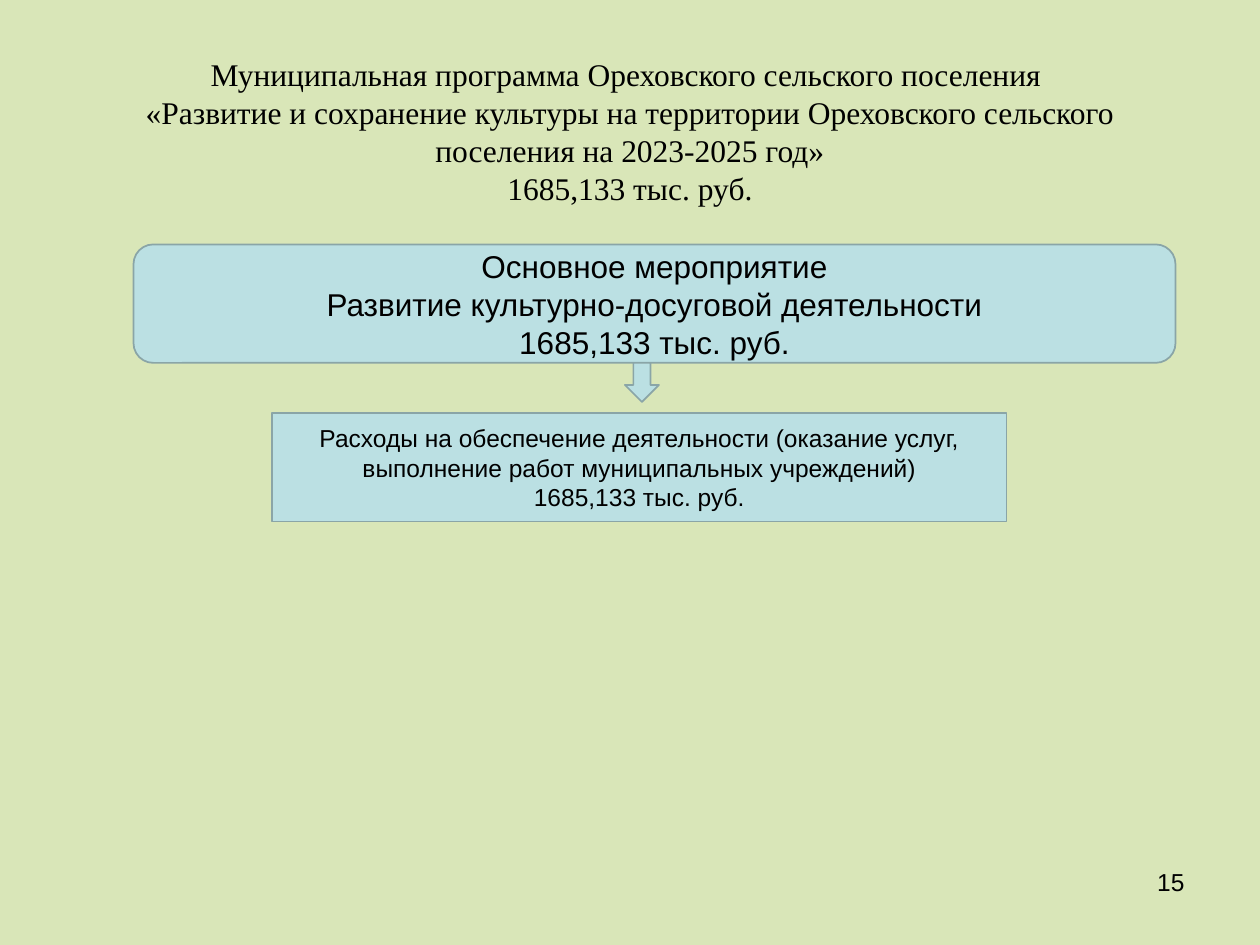
import pptx
import pptx.dml.color
import pptx.enum.shapes
import pptx.enum.text
import pptx.util
from dataclasses import dataclass

Inches = pptx.util.Inches
Shape = pptx.enum.shapes.MSO_SHAPE
Align = pptx.enum.text.PP_ALIGN
Anchor = pptx.enum.text.MSO_ANCHOR
rgb = pptx.dml.color.RGBColor.from_string


@dataclass(frozen=True)
class Theme:
    background: str = "D9E6B8"
    fill: str = "BBE0E3"
    outline: str = "8AA5A7"
    text: str = "000000"
    title_font: str = "Times New Roman"
    body_font: str = "Arial"
    large: int = 18
    small: int = 14


theme = Theme()


def write(frame, paragraphs, size, font, align=Align.CENTER, anchor=Anchor.MIDDLE):
    """Fill a text frame; each paragraph is a list of lines joined by line breaks."""
    frame.word_wrap = True
    frame.auto_size = pptx.enum.text.MSO_AUTO_SIZE.NONE
    frame.vertical_anchor = anchor
    for index, lines in enumerate(paragraphs):
        paragraph = frame.add_paragraph() if index else frame.paragraphs[0]
        paragraph.alignment = align
        for number, line in enumerate(lines):
            if number:
                paragraph.add_line_break()
            run = paragraph.add_run()
            run.text = line
            run.font.size = pptx.util.Pt(size)
            run.font.name = font
            run.font.color.rgb = rgb(theme.text)


def add_block(slide, kind, left, top, width, height):
    block = slide.shapes.add_shape(
        kind, Inches(left), Inches(top), Inches(width), Inches(height))
    block.shadow.inherit = False
    block.fill.solid()
    block.fill.fore_color.rgb = rgb(theme.fill)
    block.line.color.rgb = rgb(theme.outline)
    block.line.width = pptx.util.Pt(1)
    return block


deck = pptx.Presentation()
deck.slide_width, deck.slide_height = Inches(10), Inches(7.5)
slide = deck.slides.add_slide(deck.slide_layouts[5])
slide.background.fill.solid()
slide.background.fill.fore_color.rgb = rgb(theme.background)

amount = "1685,133 тыс. руб."

program = slide.shapes.title
program.left, program.top = Inches(0.5), Inches(0.3)
program.width, program.height = Inches(9), Inches(1.48)
write(program.text_frame, [[
    "Муниципальная программа Ореховского сельского поселения ",
    "«Развитие и сохранение культуры на территории Ореховского сельского "
    "поселения на 2023-2025 год»",
    amount,
]], theme.large, theme.title_font)

page_number = slide.shapes.add_textbox(
    Inches(7.17), Inches(6.83), Inches(2.33), Inches(0.52))
write(page_number.text_frame, [["15"]], theme.small, theme.body_font,
      Align.RIGHT, Anchor.TOP)

activity = add_block(slide, Shape.ROUNDED_RECTANGLE, 1.06, 1.94, 8.27, 0.94)
write(activity.text_frame, [
    ["Основное мероприятие"],
    ["Развитие культурно-досуговой деятельности"],
    [amount],
], theme.large, theme.body_font)

add_block(slide, Shape.DOWN_ARROW, 4.96, 2.88, 0.27, 0.31)

expenses = add_block(slide, Shape.RECTANGLE, 2.16, 3.28, 5.83, 0.86)
write(expenses.text_frame, [
    ["Расходы на обеспечение деятельности (оказание услуг, "
     "выполнение работ муниципальных учреждений)"],
    [amount],
], theme.small, theme.body_font)

deck.save("out.pptx")
